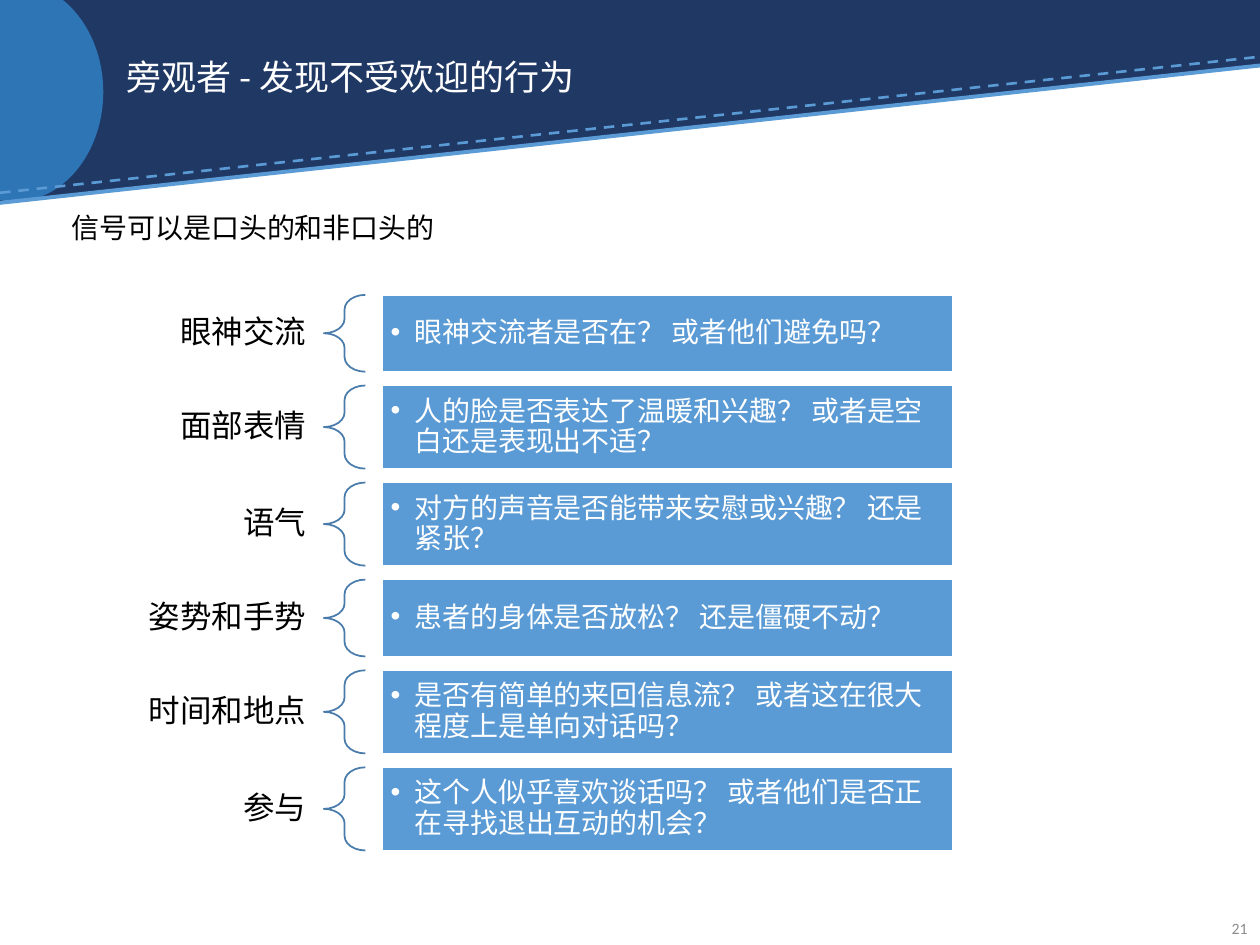
from dataclasses import dataclass

import pptx
import pptx.util
import pptx.dml.color
import pptx.enum.dml
import pptx.enum.shapes
import pptx.enum.text
import pptx.oxml.ns
from lxml import etree

Inches = pptx.util.Inches
Pt = pptx.util.Pt
SHAPE = pptx.enum.shapes.MSO_SHAPE
ANCHOR = pptx.enum.text.MSO_ANCHOR
ALIGN = pptx.enum.text.PP_ALIGN
qn = pptx.oxml.ns.qn


@dataclass(frozen=True)
class Theme:
    cjk: str = "Noto Sans CJK SC"
    latin: str = "Calibri"
    navy: str = "203864"
    blue: str = "2E75B6"
    sky: str = "5B9BD5"
    brace: str = "497CAB"
    white: str = "FFFFFF"
    black: str = "000000"
    gray: str = "8C8C8C"
    title: int = 20
    label: int = 18
    body: int = 16
    number: int = 9


T = Theme()
SIGNALS = [
    ("眼神交流", "眼神交流者是否在？ 或者他们避免吗？", 0.61),
    ("面部表情", "人的脸是否表达了温暖和兴趣？ 或者是空白还是表现出不适？", 0.66),
    ("语气", "对方的声音是否能带来安慰或兴趣？ 还是紧张？", 0.66),
    ("姿势和手势", "患者的身体是否放松？ 还是僵硬不动？", 0.61),
    ("时间和地点", "是否有简单的来回信息流？ 或者这在很大程度上是单向对话吗？", 0.66),
    ("参与", "这个人似乎喜欢谈话吗？ 或者他们是否正在寻找退出互动的机会？", 0.66),
]


def rgb(color):
    return pptx.dml.color.RGBColor.from_string(color)


def apply(obj, values):
    for name, value in values.items():
        setattr(obj, name, value)


def place(sp, box):
    apply(sp, dict(zip(("left", "top", "width", "height"), map(Inches, box))))


def write(sp, text, size, color, font=T.cjk, align=ALIGN.LEFT,
          anchor=ANCHOR.MIDDLE, inset=(0.1, 0.05), bullet=None, spacing=0.9):
    tf = sp.text_frame
    x, y = map(Inches, inset)
    apply(tf, {"word_wrap": True, "auto_size": pptx.enum.text.MSO_AUTO_SIZE.NONE,
               "vertical_anchor": anchor, "margin_left": x, "margin_right": x,
               "margin_top": y, "margin_bottom": y})
    p = tf.paragraphs[0]
    apply(p, {"alignment": align, "line_spacing": spacing, "space_before": Pt(0)})
    pPr = p._p.get_or_add_pPr()
    indent = Inches(0.19) if bullet else 0
    pPr.set("marL", str(indent))
    pPr.set("indent", str(-indent))
    if bullet:
        etree.SubElement(pPr, qn("a:buFont")).set("typeface", "Arial")
        etree.SubElement(pPr, qn("a:buChar")).set("char", bullet)
    else:
        etree.SubElement(pPr, qn("a:buNone"))
    r = p.add_run()
    r.text = text
    apply(r.font, {"name": font, "size": Pt(size)})
    r.font.color.rgb = rgb(color)
    etree.SubElement(r._r.get_or_add_rPr(), qn("a:ea")).set("typeface", font)


def add_shape(shapes, kind, box, fill=None, line=None):
    sp = shapes.add_shape(kind, *map(Inches, box))
    sp.shadow.inherit = False
    if fill:
        sp.fill.solid()
        sp.fill.fore_color.rgb = rgb(fill)
    else:
        sp.fill.background()
    if line:
        sp.line.color.rgb = rgb(line)
        sp.line.width = Pt(1)
    else:
        sp.line.fill.background()
    return sp


def add_line(shapes, start, end, width, dash=None):
    ln = shapes.add_connector(pptx.enum.shapes.MSO_CONNECTOR.STRAIGHT,
                              *map(Inches, start + end))
    ln.line.color.rgb = rgb(T.sky)
    apply(ln.line, {"width": Pt(width), "dash_style": dash})
    etree.SubElement(ln._element.spPr, qn("a:effectLst"))


def add_banner(s, box):
    x, y, w, h = box
    edge = y + 0.52
    add_shape(s.shapes, SHAPE.RECTANGLE, (x, y, w, 0.52), T.navy)
    wedge = add_shape(s.shapes, SHAPE.RIGHT_TRIANGLE, (x, edge - 0.01, w, h - 0.51), T.navy)
    wedge._element.spPr.find(qn("a:xfrm")).set("flipV", "1")
    add_shape(s.shapes, SHAPE.OVAL, (x - 0.59, y - 0.14, 1.41, 1.74), T.blue)
    add_line(s.shapes, (x, y + 1.53), (x + w, y + 0.45), 1.5,
             pptx.enum.dml.MSO_LINE.DASH)
    add_line(s.shapes, (x, y + 1.61), (x + w, edge), 2.25)


def fill_placeholder(s, sp, box, text, size, color, anchor):
    s.shapes._spTree.append(sp._element)
    place(sp, box)
    write(sp, text, size, color, anchor=anchor)


def add_number(s, box, text):
    sp = s.shapes.add_textbox(*map(Inches, box))
    write(sp, text, T.number, T.gray, font=T.latin, align=ALIGN.RIGHT, spacing=1.0)


def add_signal(shapes, box, label, question):
    x, y, w, h = box
    label_w, label_h, brace_w, card_x = 1.67, 0.61, 0.33, 2.13
    sp = shapes.add_textbox(*map(Inches, (x, y + (h - label_h) / 2, label_w, label_h)))
    write(sp, label, T.label, T.black, align=ALIGN.RIGHT, inset=(0.14, 0.05))
    brace = add_shape(shapes, SHAPE.LEFT_BRACE, (x + label_w, y, brace_w, h), line=T.brace)
    brace.adjustments[0] = 0.35
    brace.adjustments[1] = 0.5
    card = add_shape(shapes, SHAPE.RECTANGLE, (x + card_x, y, w - card_x, h), T.sky, T.white)
    write(card, question, T.body, T.white, inset=(0.07, 0.07), bullet="•")


def add_signals(s, box, gap=0.11):
    x, y, w, h = box
    group = s.shapes.add_group_shape()
    for label, question, row_h in SIGNALS:
        add_signal(group.shapes, (x, y, w, row_h), label, question)
        y += row_h + gap


def main():
    prs = pptx.Presentation()
    apply(prs, {"slide_width": Inches(10), "slide_height": Inches(7.5)})
    s = prs.slides.add_slide(prs.slide_layouts[1])
    add_banner(s, (0, 0, 10, 1.6))
    fill_placeholder(s, s.shapes.title, (0.9, 0.2, 8.05, 0.86),
                     "旁观者 - 发现不受欢迎的行为", T.title, T.white, ANCHOR.MIDDLE)
    fill_placeholder(s, s.placeholders[1], (0.47, 1.65, 8.83, 5.3),
                     "信号可以是口头的和非口头的", T.body, T.black, ANCHOR.TOP)
    add_number(s, (9.47, 7.17, 0.53, 0.4), "21")
    add_signals(s, (0.9, 2.34, 6.66, 4.41))
    prs.save("out.pptx")


if __name__ == "__main__":
    main()
